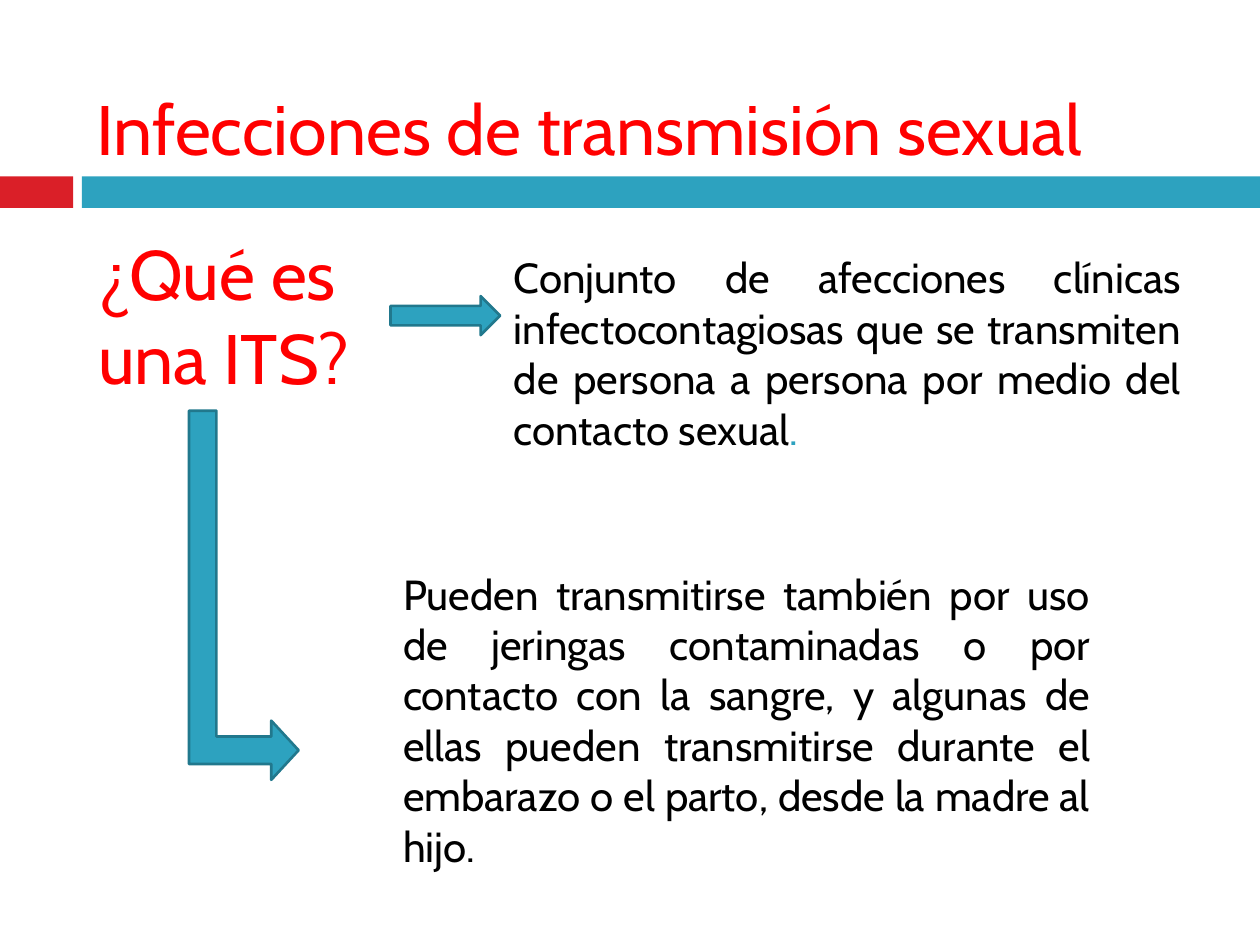
"""Build a slide that explains what sexually transmitted infections are."""
from dataclasses import dataclass
from typing import Optional

import pptx
import pptx.dml.color
import pptx.enum.shapes
import pptx.enum.text
import pptx.util
from pptx.util import Inches

SHAPES = pptx.enum.shapes.MSO_SHAPE
ALIGN = pptx.enum.text.PP_ALIGN


@dataclass(frozen=True)
class Theme:
    """Colours, font and sizes of the slide."""
    heading: str = "FF0000"
    body: str = "000000"
    accent: str = "2DA2BF"
    accent_edge: str = "21788D"
    tab: str = "DA1F28"
    font: str = "Cabin"
    heading_size: float = 40
    body_size: float = 24
    edge_width: float = 1.5


THEME = Theme()


@dataclass(frozen=True)
class Box:
    """Position and size in inches."""
    left: float
    top: float
    width: float
    height: float

    def lengths(self) -> tuple:
        """Return the four lengths for python-pptx."""
        return tuple(Inches(n) for n in (self.left, self.top, self.width, self.height))


@dataclass(frozen=True)
class Passage:
    """A text block made of (text, colour) pieces."""
    box: Box
    pieces: tuple
    size: float
    align: pptx.enum.text.PP_ALIGN = ALIGN.LEFT


@dataclass(frozen=True)
class Figure:
    """A filled preset shape with an optional edge."""
    kind: pptx.enum.shapes.MSO_SHAPE
    box: Box
    fill: str
    edge: Optional[str] = None
    rotation: float = 0
    adjustments: tuple = ()


BANNER_TOP, BANNER_HEIGHT = 1.4, 0.25

FIGURES = (
    Figure(SHAPES.RECTANGLE, Box(0, BANNER_TOP, 0.58, BANNER_HEIGHT), THEME.tab),
    Figure(SHAPES.RECTANGLE, Box(0.65, BANNER_TOP, 9.35, BANNER_HEIGHT), THEME.accent),
    Figure(SHAPES.RIGHT_ARROW, Box(3.1, 2.35, 0.87, 0.31), THEME.accent, THEME.accent_edge),
    Figure(SHAPES.BENT_UP_ARROW, Box(0.47, 4.29, 2.93, 0.87), THEME.accent,
           THEME.accent_edge, 90, (0.25, 0.27, 0.25)),
)

PASSAGES = (
    Passage(Box(0.67, 0.63, 8.66, 0.77),
            (("Infecciones de transmisión sexual", THEME.heading),), THEME.heading_size),
    Passage(Box(0.68, 1.78, 2.52, 1.45),
            (("¿Qué es una ITS?", THEME.heading),), THEME.heading_size),
    Passage(Box(3.98, 1.95, 5.49, 1.72),
            (("Conjunto de afecciones clínicas infectocontagiosas que se transmiten "
              "de persona a persona por medio del contacto sexual", THEME.body),
             (".", THEME.accent)), THEME.body_size, ALIGN.JUSTIFY),
    Passage(Box(3.1, 4.46, 5.65, 2.52),
            (("Pueden transmitirse también por uso de jeringas contaminadas o por "
              "contacto con la sangre, y algunas de ellas pueden transmitirse durante "
              "el embarazo o el parto, desde la madre al hijo.", THEME.body),),
            THEME.body_size, ALIGN.JUSTIFY),
)


def rgb(code: str) -> pptx.dml.color.RGBColor:
    """Turn a hex code into a colour."""
    return pptx.dml.color.RGBColor.from_string(code)


def draw_figure(slide: pptx.slide.Slide, figure: Figure) -> None:
    """Draw a preset shape."""
    shape = slide.shapes.add_shape(figure.kind, *figure.box.lengths())
    shape.shadow.inherit = False
    shape.rotation = figure.rotation
    for index, value in enumerate(figure.adjustments):
        shape.adjustments[index] = value
    shape.fill.solid()
    shape.fill.fore_color.rgb = rgb(figure.fill)
    if figure.edge:
        shape.line.color.rgb = rgb(figure.edge)
        shape.line.width = pptx.util.Pt(THEME.edge_width)
    else:
        shape.line.fill.background()


def draw_passage(slide: pptx.slide.Slide, passage: Passage) -> None:
    """Draw a wrapped text block."""
    frame = slide.shapes.add_textbox(*passage.box.lengths()).text_frame
    frame.word_wrap = True
    frame.auto_size = pptx.enum.text.MSO_AUTO_SIZE.SHAPE_TO_FIT_TEXT
    paragraph = frame.paragraphs[0]
    paragraph.alignment = passage.align
    for text, color in passage.pieces:
        run = paragraph.add_run()
        run.text = text
        run.font.name = THEME.font
        run.font.size = pptx.util.Pt(passage.size)
        run.font.color.rgb = rgb(color)


def main() -> None:
    """Build and save the slide."""
    deck = pptx.Presentation()
    deck.slide_width, deck.slide_height = Inches(10), Inches(7.5)
    slide = deck.slides.add_slide(deck.slide_layouts[6])
    for figure in FIGURES:
        draw_figure(slide, figure)
    for passage in PASSAGES:
        draw_passage(slide, passage)
    deck.save("out.pptx")


if __name__ == "__main__":
    main()
